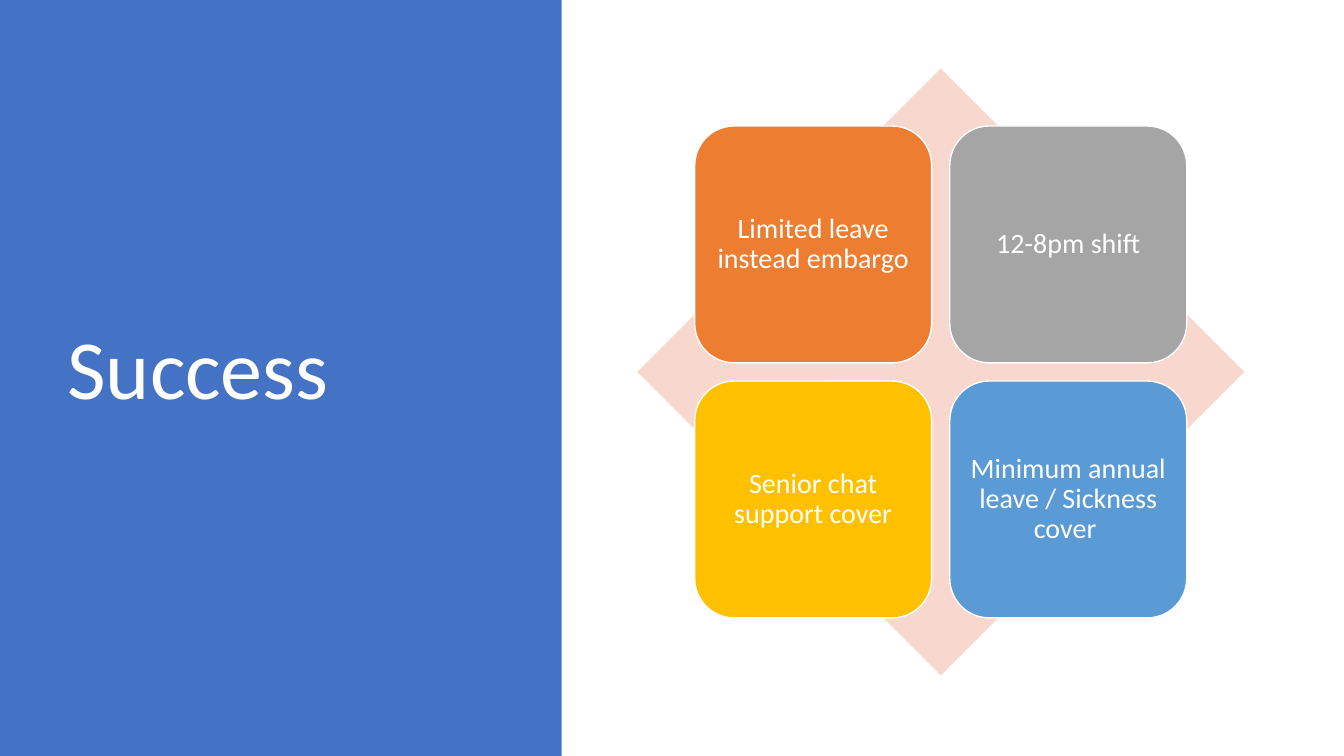
from dataclasses import dataclass

from pptx import Presentation
from pptx.dml.color import RGBColor
from pptx.enum.shapes import MSO_SHAPE
from pptx.enum.text import MSO_ANCHOR, PP_ALIGN
from pptx.shapes.autoshape import Shape
from pptx.slide import Slide
from pptx.util import Inches, Pt

COLOURS = {
    "white": "FFFFFF",
    "panel": "4472C4",
    "diamond": "F8D7CE",
    "orange": "ED7D31",
    "grey": "A5A5A5",
    "gold": "FFC000",
    "blue": "5B9BD5",
}
FONT = "Calibri"
SLIDE_HEIGHT = 7.5
DIAMOND_LEFT, DIAMOND_TOP, DIAMOND_SIZE = 6.32, 0.68, 6.02
TILE_LEFT, TILE_TOP, TILE_SIZE, TILE_STEP = 6.89, 1.25, 2.35, 2.53
TILE_INSET = 0.08


@dataclass
class Tile:
    text: str
    colour: str


# Tiles in reading order, two to a row
TILES = [
    Tile("Limited leave instead embargo", "orange"),
    Tile("12-8pm shift", "grey"),
    Tile("Senior chat support cover", "gold"),
    Tile("Minimum annual leave / Sickness cover ", "blue"),
]


def colour(name: str) -> RGBColor:
    return RGBColor.from_string(COLOURS[name])


def add_block(page: Slide, kind: MSO_SHAPE, left: float, top: float,
              width: float, height: float, fill: str) -> Shape:
    block = page.shapes.add_shape(
        kind, Inches(left), Inches(top), Inches(width), Inches(height))
    block.shadow.inherit = False
    block.fill.solid()
    block.fill.fore_color.rgb = colour(fill)
    block.line.fill.background()
    return block


def write(box: Shape, text: str, size: int, align: PP_ALIGN) -> None:
    frame = box.text_frame
    frame.word_wrap = True
    frame.vertical_anchor = MSO_ANCHOR.MIDDLE
    para = frame.paragraphs[0]
    para.text = text
    para.alignment = align
    para.line_spacing = 0.9
    para.font.name = FONT
    para.font.size = Pt(size)
    para.font.color.rgb = colour("white")


def add_tile(page: Slide, tile: Tile, row: int, column: int) -> None:
    box = add_block(page, MSO_SHAPE.ROUNDED_RECTANGLE,
                    TILE_LEFT + column * TILE_STEP, TILE_TOP + row * TILE_STEP,
                    TILE_SIZE, TILE_SIZE, tile.colour)
    box.line.color.rgb = colour("white")
    box.line.width = Pt(1)
    frame = box.text_frame
    frame.margin_left = frame.margin_right = Inches(TILE_INSET)
    frame.margin_top = frame.margin_bottom = Inches(TILE_INSET)
    write(box, tile.text, 20, PP_ALIGN.CENTER)


def main() -> None:
    deck = Presentation()
    deck.slide_width = Inches(13.33)
    deck.slide_height = Inches(SLIDE_HEIGHT)
    page = deck.slides.add_slide(deck.slide_layouts[6])

    # Title panel
    add_block(page, MSO_SHAPE.RECTANGLE, 0, 0, 5.57, SLIDE_HEIGHT, "panel")
    title = page.shapes.add_textbox(
        Inches(0.57), Inches(0.68), Inches(4.16), Inches(6.02))
    write(title, "Success", 60, PP_ALIGN.LEFT)

    # Diamond with four tiles
    add_block(page, MSO_SHAPE.DIAMOND, DIAMOND_LEFT, DIAMOND_TOP,
              DIAMOND_SIZE, DIAMOND_SIZE, "diamond")
    for index, tile in enumerate(TILES):
        row, column = divmod(index, 2)
        add_tile(page, tile, row, column)

    deck.save("out.pptx")


if __name__ == "__main__":
    main()
